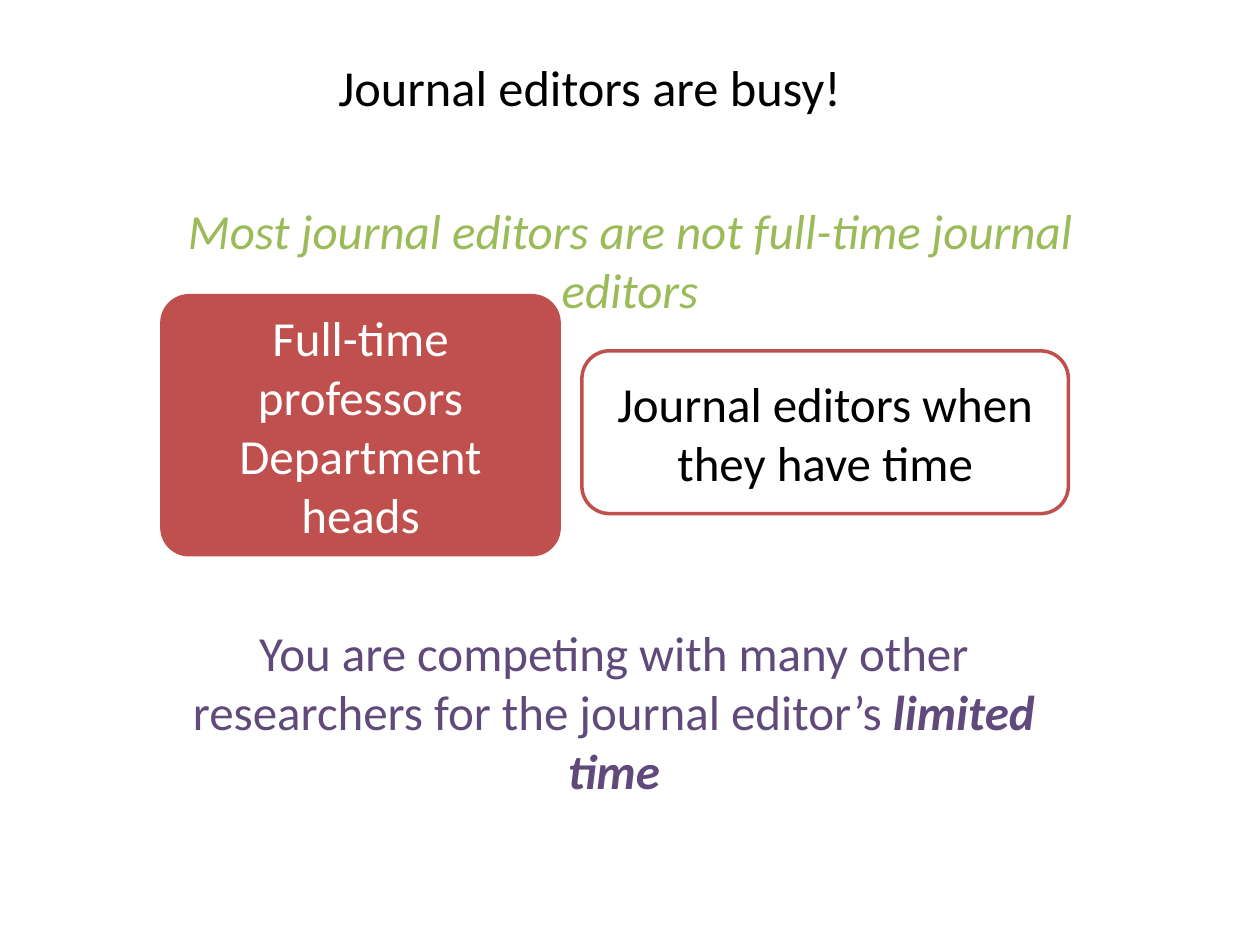
import pptx
import pptx.util
from pptx.dml.color import RGBColor
from pptx.enum.shapes import MSO_SHAPE
from pptx.enum.text import MSO_ANCHOR, PP_ALIGN

Pt = pptx.util.Pt

COLORS = {
    "ink": "000000",
    "paper": "FFFFFF",
    "red": "C0504D",
    "green": "9BBB59",
    "purple": "604A7B",
}
FONT = "Calibri"
BODY_SIZE = 28
INSET = 5.76


def rgb(name):
    return RGBColor.from_string(COLORS[name])


def write(frame, paragraphs, color, size=BODY_SIZE, anchor=MSO_ANCHOR.TOP, inset=INSET):
    """Fill a frame with centred paragraphs, each a list of (text, bold, italic) runs."""
    frame.word_wrap = True
    frame.vertical_anchor = anchor
    frame.margin_left = frame.margin_right = Pt(inset)
    frame.margin_top = frame.margin_bottom = Pt(inset)
    for index, runs in enumerate(paragraphs):
        paragraph = frame.add_paragraph() if index else frame.paragraphs[0]
        paragraph.alignment = PP_ALIGN.CENTER
        for text, bold, italic in runs:
            run = paragraph.add_run()
            run.text = text
            run.font.name = FONT
            run.font.size = Pt(size)
            run.font.bold = bold
            run.font.italic = italic
            run.font.color.rgb = rgb(color)


def place_title(slide, left, top, width, height):
    title = slide.shapes.title
    title.left, title.top, title.width, title.height = map(Pt, (left, top, width, height))
    write(title.text_frame, [[("Journal editors are busy!", False, False)]],
          "ink", size=28.8, anchor=MSO_ANCHOR.MIDDLE, inset=0)


def add_statement(slide, box, runs, color):
    statement = slide.shapes.add_textbox(*map(Pt, box))
    write(statement.text_frame, [runs], color)


def add_role(slide, box, lines, fill, outline, color, rounding):
    role = slide.shapes.add_shape(MSO_SHAPE.ROUNDED_RECTANGLE, *map(Pt, box))
    role.shadow.inherit = False
    role.adjustments[0] = rounding
    role.fill.solid()
    role.fill.fore_color.rgb = rgb(fill)
    if outline:
        role.line.color.rgb = rgb(outline)
        role.line.width = Pt(2)
    else:
        role.line.fill.background()
    write(role.text_frame, [[(line, False, False)] for line in lines],
          color, anchor=MSO_ANCHOR.MIDDLE)


def add_roles(slide, left, top, width, height):
    """Place the day job at the left and the smaller editor role at the right."""
    job_width, editor_width, editor_height = 229, 278, 93
    add_role(slide, (left, top, job_width, height),
             ["Full-time professors", "Department heads"],
             "red", None, "paper", 0.11)
    editor_top = top + (height - editor_height) / 2 + 4
    add_role(slide, (left + width - editor_width, editor_top, editor_width, editor_height),
             ["Journal editors when they have time"],
             "paper", "red", "ink", 0.17)


def main():
    presentation = pptx.Presentation()
    presentation.slide_width, presentation.slide_height = Pt(720), Pt(540)
    slide = presentation.slides.add_slide(presentation.slide_layouts[5])

    place_title(slide, 37.5, 34.5, 599, 29.5)
    add_statement(slide, (64, 108.7, 592, 79),
                  [("Most journal editors are not full-time journal editors", False, True)],
                  "green")
    add_roles(slide, 91.5, 168, 519, 150)
    add_statement(slide, (91.5, 350, 518.5, 113),
                  [("You are competing with many other researchers for the journal editor’s ",
                    False, False),
                   ("limited time", True, True)],
                  "purple")

    presentation.save("out.pptx")


if __name__ == "__main__":
    main()
